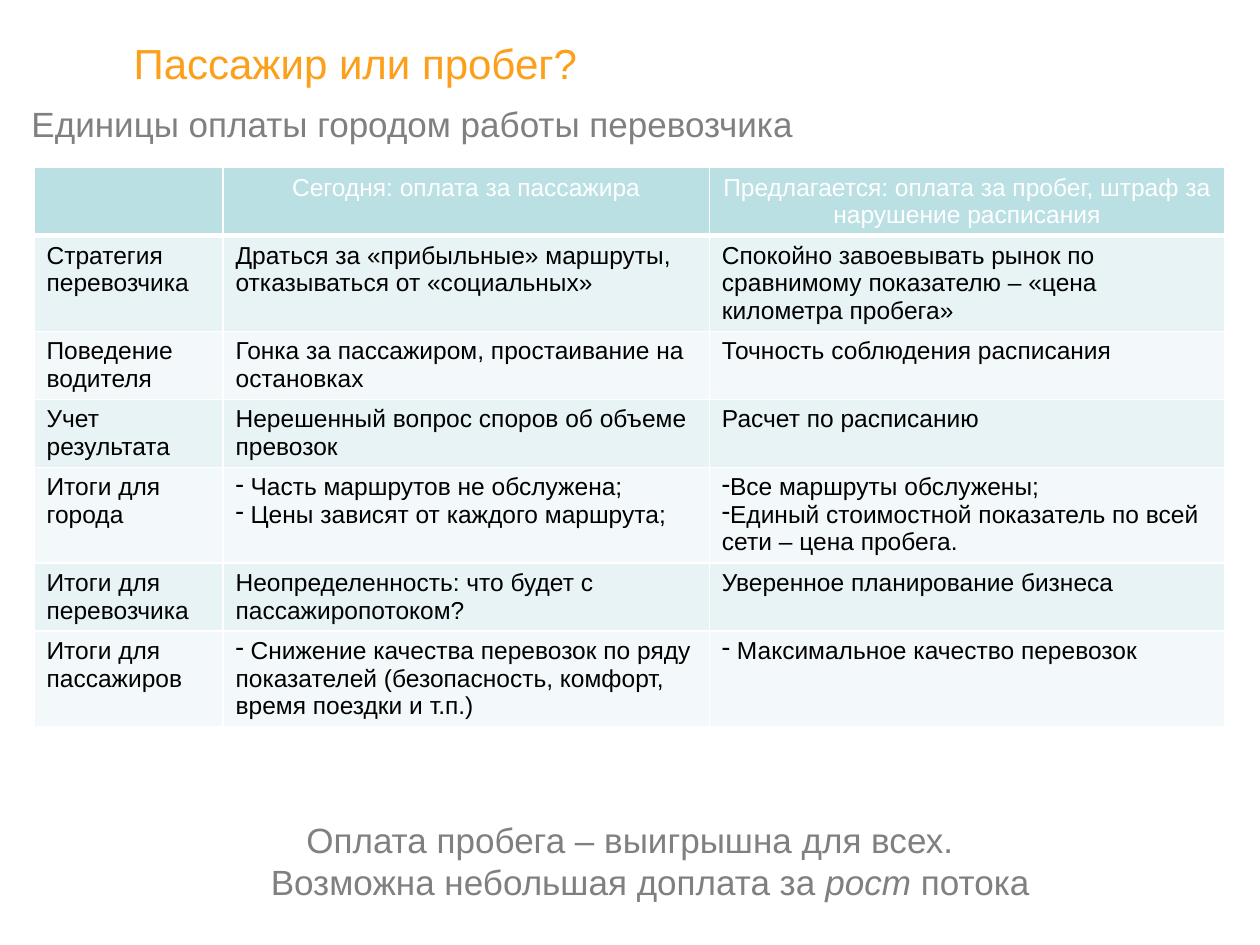
from lxml.etree import SubElement
from pptx import Presentation
from pptx.dml.color import RGBColor
from pptx.enum.text import MSO_ANCHOR as Anchor, MSO_AUTO_SIZE as AutoSize, PP_ALIGN as Align
from pptx.oxml.ns import qn
from pptx.util import Inches, Pt

ORANGE, GRAY, WHITE, BLACK = "FC9F1A", "808080", "FFFFFF", "000000"
HEADER_FILL, BAND_FILLS = "BBE0E3", ("E7F3F4", "F3F9FA")
COLUMN_WIDTHS = (1.5, 3.86, 4.09)
TWO_LINES, THREE_LINES = 0.54, 0.76
ROW_HEIGHTS = (TWO_LINES, THREE_LINES, TWO_LINES, TWO_LINES, THREE_LINES, TWO_LINES, THREE_LINES)
ROWS = (
    ("", "Сегодня: оплата за пассажира",
     "Предлагается: оплата за пробег, штраф за нарушение расписания"),
    ("Стратегия перевозчика", "Драться за «прибыльные» маршруты, отказываться от «социальных»",
     "Спокойно завоевывать рынок по сравнимому показателю – «цена километра пробега»"),
    ("Поведение водителя", "Гонка за пассажиром, простаивание на остановках",
     "Точность соблюдения расписания"),
    ("Учет результата", "Нерешенный вопрос споров об объеме превозок", "Расчет по расписанию"),
    ("Итоги для города", "- Часть маршрутов не обслужена;\n- Цены зависят от каждого маршрута;",
     "-Все маршруты обслужены;\n-Единый стоимостной показатель по всей сети – цена пробега."),
    ("Итоги для перевозчика", "Неопределенность: что будет с пассажиропотоком?",
     "Уверенное планирование бизнеса"),
    ("Итоги для пассажиров",
     "- Снижение качества перевозок по ряду показателей (безопасность, комфорт, время поездки и т.п.)",
     "- Максимальное качество перевозок"),
)


def color(value):
    """Turn a hex string into a colour."""
    return RGBColor.from_string(value)


def set_attributes(target, values):
    """Set each named attribute of the target."""
    for name, value in values.items():
        setattr(target, name, value)


def add_run(paragraph, text, size, hex_color, italic=False):
    """Add a formatted run to a paragraph."""
    run = paragraph.add_run()
    run.text = text
    set_attributes(run.font, {"name": "Arial", "size": Pt(size), "bold": False, "italic": italic})
    run.font.color.rgb = color(hex_color)


def set_indent(paragraph, margin, indent):
    """Set the left margin and first-line indent in inches."""
    properties = paragraph._p.get_or_add_pPr()
    properties.set("marL", str(Inches(margin)))
    properties.set("indent", str(Inches(indent)))
    return properties


def prepare_frame(shape, anchor):
    """Remove the insets of a text shape and return its first paragraph."""
    frame = shape.text_frame
    set_attributes(frame, {
        "word_wrap": True, "auto_size": AutoSize.NONE, "vertical_anchor": anchor,
        "margin_left": 0, "margin_top": 0, "margin_right": 0, "margin_bottom": 0,
    })
    return frame.paragraphs[0]


def place_title(slide, left, top, width, height):
    """Place and fill the slide title."""
    title = slide.shapes.title
    set_attributes(title, {"left": Inches(left), "top": Inches(top),
                           "width": Inches(width), "height": Inches(height)})
    paragraph = prepare_frame(title, Anchor.MIDDLE)
    paragraph.alignment = Align.LEFT
    set_indent(paragraph, 0.39, 0)
    add_run(paragraph, "Пассажир или пробег?", 24, ORANGE)


def add_statement(slide, box, alignment, lines):
    """Add a grey statement whose lines are lists of (text, italic) runs."""
    shape = slide.shapes.add_textbox(*map(Inches, box))
    paragraph = prepare_frame(shape, Anchor.TOP)
    paragraph.alignment = alignment
    set_indent(paragraph, 0.32, -0.32)
    for number, line in enumerate(lines):
        if number:
            paragraph.add_line_break()
        for text, italic in line:
            add_run(paragraph, text, 20, GRAY, italic)


def set_borders(cell, is_header):
    """Draw white cell borders, thicker under the header."""
    properties = cell._tc.get_or_add_tcPr()
    widths = {"a:lnL": 1, "a:lnR": 1, "a:lnT": 1, "a:lnB": 3 if is_header else 1}
    for tag, width in widths.items():
        line = SubElement(properties, qn(tag), w=str(Pt(width)))
        fill = SubElement(line, qn("a:solidFill"))
        SubElement(fill, qn("a:srgbClr"), val=WHITE)


def fill_cell(cell, text, row_number):
    """Write and format a cell, turning leading dashes into bullets."""
    is_header = row_number == 0
    set_borders(cell, is_header)
    cell.fill.solid()
    cell.fill.fore_color.rgb = color(HEADER_FILL if is_header else BAND_FILLS[(row_number - 1) % 2])
    for number, line in enumerate(text.split("\n") if text else ()):
        frame = cell.text_frame
        paragraph = frame.add_paragraph() if number else frame.paragraphs[0]
        paragraph.alignment = Align.CENTER if is_header else Align.LEFT
        if line.startswith("-"):
            SubElement(set_indent(paragraph, 0, 0), qn("a:buChar"), char="-")
        add_run(paragraph, line.removeprefix("-"), 14, WHITE if is_header else BLACK)


def add_comparison(slide, left, top):
    """Add the table comparing the two payment units."""
    table = slide.shapes.add_table(
        len(ROWS), len(COLUMN_WIDTHS), Inches(left), Inches(top),
        Inches(sum(COLUMN_WIDTHS)), Inches(sum(ROW_HEIGHTS))).table
    for column, width in zip(table.columns, COLUMN_WIDTHS):
        column.width = Inches(width)
    for row_number, (row, height, texts) in enumerate(zip(table.rows, ROW_HEIGHTS, ROWS)):
        row.height = Inches(height)
        for cell, text in zip(row.cells, texts):
            fill_cell(cell, text, row_number)


def main():
    """Build and save the presentation."""
    presentation = Presentation()
    set_attributes(presentation, {"slide_width": Inches(10), "slide_height": Inches(7.5)})
    slide = presentation.slides.add_slide(presentation.slide_layouts[5])
    place_title(slide, 0.67, 0.25, 7.64, 0.5)
    add_comparison(slide, 0.27, 1.33)
    add_statement(slide, (0, 6.5, 10, 0.77), Align.CENTER, [
        [("Оплата пробега – выигрышна для всех.", False)],
        [("Возможна небольшая доплата за ", False), ("рост ", True), ("потока", False)],
    ])
    add_statement(slide, (0.25, 0.81, 8.43, 0.44), Align.LEFT,
                  [[("Единицы оплаты городом работы перевозчика", False)]])
    presentation.save("out.pptx")


if __name__ == "__main__":
    main()
